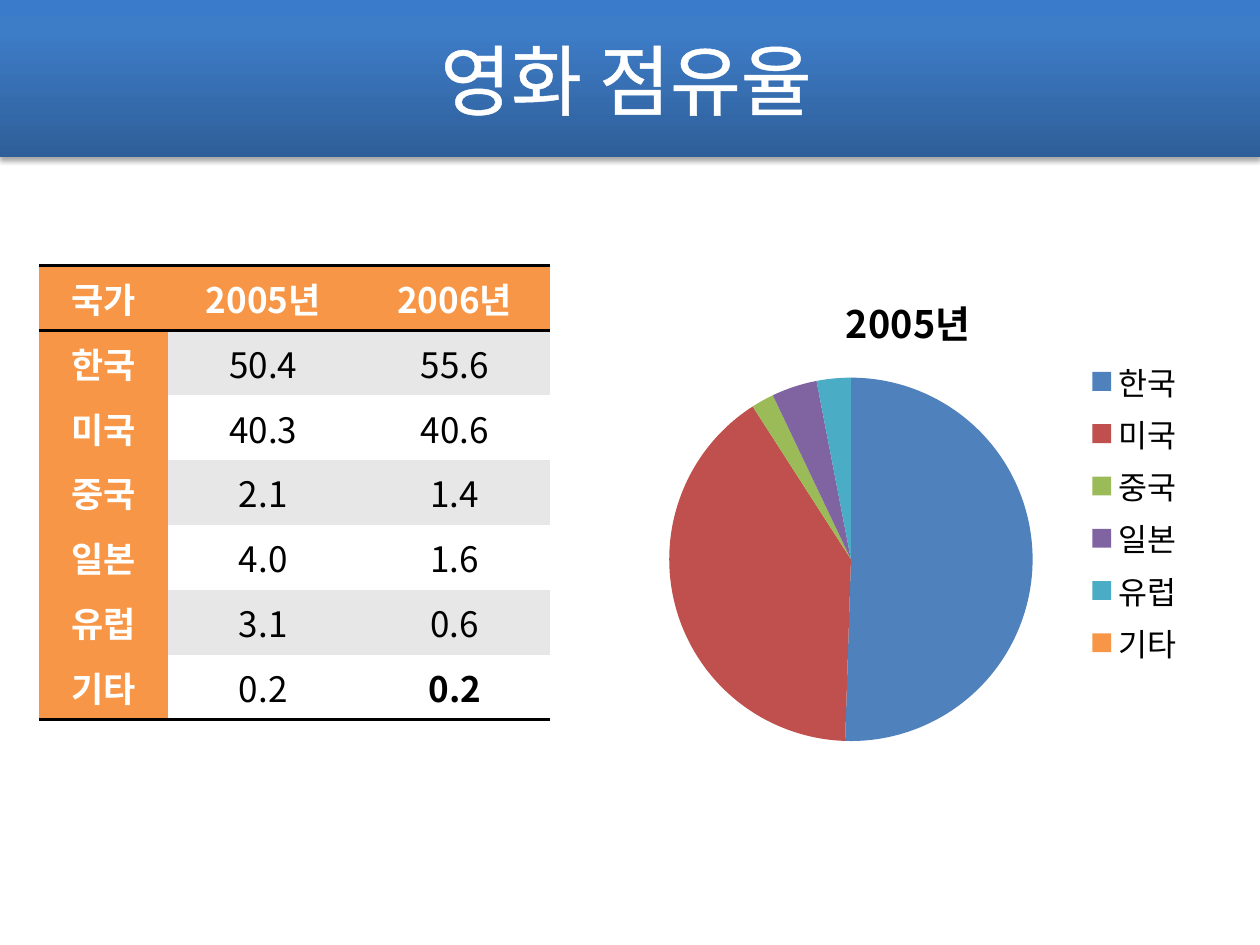
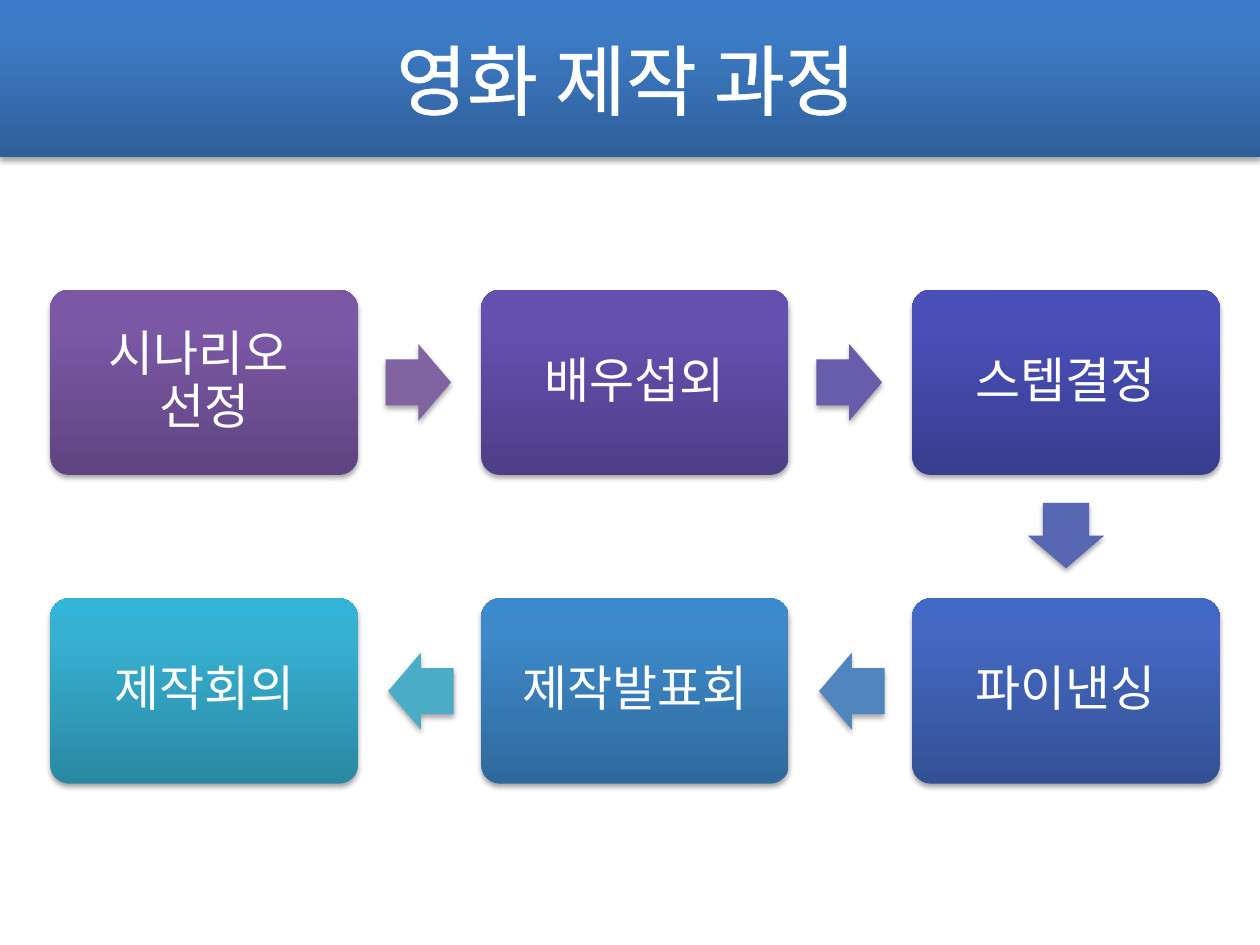
from dataclasses import dataclass
from enum import Enum
from typing import Optional

from lxml import etree
from pptx import Presentation
from pptx import util as u
from pptx.chart.data import CategoryChartData
from pptx.dml.color import RGBColor
from pptx.enum import chart as charts, shapes, text
from pptx.oxml.ns import qn

FONT = "Noto Sans CJK KR"
WHITE = RGBColor(0xFF, 0xFF, 0xFF)
BLACK = RGBColor(0, 0, 0)
GREY = RGBColor(0xE7, 0xE7, 0xE7)
ORANGE = RGBColor(0xF7, 0x96, 0x46)
BLUE = RGBColor(0x4F, 0x81, 0xBD)
RED = RGBColor(0xC0, 0x50, 0x4D)
GREEN = RGBColor(0x9B, 0xBB, 0x59)
PURPLE = RGBColor(0x80, 0x64, 0xA2)
AQUA = RGBColor(0x4B, 0xAC, 0xC6)
VIOLET = RGBColor(0x68, 0x5D, 0xAB)
INDIGO = RGBColor(0x57, 0x67, 0xB4)
STEEL = RGBColor(0x51, 0x85, 0xBD)

SLIDE_WIDTH, SLIDE_HEIGHT, BAND_HEIGHT = 10, 7.5, 1.25
BOX_WIDTH, BOX_HEIGHT = 2.44, 1.47
GRID_LEFT, GRID_TOP, COLUMN_STEP, ROW_STEP = 0.4, 2.3, 3.42, 2.45
ARROW_LENGTH, ARROW_BREADTH, ARROW_GAP = 0.52, 0.61, 0.22
COLUMN_WIDTHS = (1.02, 1.52, 1.52)
NO_TABLE_STYLE = "{2D5ABB26-0587-4C30-8999-92F81FD0307C}"


@dataclass(frozen=True)
class Gradient:
    """Colours from the bottom edge to the top edge."""
    bottom: RGBColor
    middle: RGBColor
    top: RGBColor


class Direction(Enum):
    RIGHT = (1, 0, 0)
    DOWN = (0, 1, 90)
    LEFT = (-1, 0, 180)


@dataclass(frozen=True)
class Step:
    label: str
    column: int
    row: int
    gradient: Gradient
    arrow_color: Optional[RGBColor] = None
    direction: Optional[Direction] = None


@dataclass(frozen=True)
class Share:
    country: str
    values: tuple[float, float]
    color: RGBColor


def gradient(bottom: str, middle: str, top: str) -> Gradient:
    return Gradient(*map(RGBColor.from_string, (bottom, middle, top)))


BAND_GRADIENT = gradient("2F5F99", "3D7CC7", "3A7CCB")
YEARS = ("2005년", "2006년")
SHARES = [
    Share("한국", (50.4, 55.6), BLUE),
    Share("미국", (40.3, 40.6), RED),
    Share("중국", (2.1, 1.4), GREEN),
    Share("일본", (4.0, 1.6), PURPLE),
    Share("유럽", (3.1, 0.6), AQUA),
    Share("기타", (0.2, 0.2), ORANGE),
]
STEPS = [
    Step("시나리오 \n선정", 0, 0, gradient("5F4480", "7B58A6", "7C57A8"), PURPLE, Direction.RIGHT),
    Step("배우섭외", 1, 0, gradient("4D3E87", "6451AF", "6450B2"), VIOLET, Direction.RIGHT),
    Step("스텝결정", 2, 0, gradient("393D8E", "4A4FB8", "484EBB"), INDIGO, Direction.DOWN),
    Step("파이낸싱", 2, 1, gradient("345094", "4468C1", "4168C4"), STEEL, Direction.LEFT),
    Step("제작발표회", 1, 1, gradient("2F699B", "3D89C9", "3B8ACD"), AQUA, Direction.LEFT),
    Step("제작회의", 0, 1, gradient("2A88A2", "37B1D2", "34B4D6")),
]


def add_color(parent, color: RGBColor):
    return etree.SubElement(parent, qn("a:srgbClr"), val=str(color))


def add_east_asian_font(element) -> None:
    """Name the Korean font beside each Latin one."""
    for latin in list(element.iter(qn("a:latin"))):
        latin.addnext(latin.makeelement(qn("a:ea"), {"typeface": FONT}))


def add_run(para, words: str, size: float, color: RGBColor, bold: bool = False):
    span = para.add_run()
    span.text = words
    span.font.name = FONT
    span.font.size = u.Pt(size)
    span.font.bold = bold
    span.font.color.rgb = color
    add_east_asian_font(span._r)
    return span


def add_shadowed_shape(page, kind, left: float, top: float, width: float, height: float):
    shape = page.shapes.add_shape(
        kind, u.Inches(left), u.Inches(top), u.Inches(width), u.Inches(height))
    shape.line.fill.background()
    shape.shadow.inherit = False
    effects = shape.element.spPr.find(qn("a:effectLst"))
    shadow = etree.SubElement(
        effects, qn("a:outerShdw"), blurRad=str(u.Pt(3.1)), dist=str(u.Pt(1.8)),
        dir="5400000", rotWithShape="0")
    etree.SubElement(add_color(shadow, BLACK), qn("a:alpha"), val="35000")
    return shape


def fill_gradient(shape, colors: Gradient) -> None:
    shape.fill.gradient()
    shape.fill.gradient_angle = 90
    stops = shape.element.spPr.find(".//" + qn("a:gsLst"))
    for stop in list(stops):
        stops.remove(stop)
    for percent, color in ((0, colors.bottom), (80, colors.middle), (100, colors.top)):
        add_color(etree.SubElement(stops, qn("a:gs"), pos=str(percent * 1000)), color)


def add_titled_page(deck, title: str):
    page = deck.slides.add_slide(deck.slide_layouts[6])
    band = add_shadowed_shape(
        page, shapes.MSO_SHAPE.RECTANGLE, 0, 0, SLIDE_WIDTH, BAND_HEIGHT)
    fill_gradient(band, BAND_GRADIENT)
    box = page.shapes.add_textbox(
        u.Inches(0.47), u.Inches(0), u.Inches(9), u.Inches(BAND_HEIGHT))
    box.text_frame.word_wrap = True
    box.text_frame.vertical_anchor = text.MSO_ANCHOR.MIDDLE
    para = box.text_frame.paragraphs[0]
    para.alignment = text.PP_ALIGN.CENTER
    span = add_run(para, title, 44, WHITE)
    properties = span._r.get_or_add_rPr()
    outline = properties.makeelement(qn("a:ln"), {"w": str(u.Pt(1.45))})
    add_color(etree.SubElement(outline, qn("a:solidFill")), WHITE)
    properties.insert(0, outline)
    return page


def add_cell_border(cell, side: str) -> None:
    """Rule one side of a cell; a:lnT comes before a:lnB and the fill."""
    properties = cell._tc.get_or_add_tcPr()
    border = properties.makeelement(qn(f"a:{side}"), {"w": str(u.Pt(2))})
    add_color(etree.SubElement(border, qn("a:solidFill")), BLACK)
    properties.insert(0, border)


def write_cell(cell, words: str, fill: RGBColor, color: RGBColor, bold: bool) -> None:
    cell.fill.solid()
    cell.fill.fore_color.rgb = fill
    cell.vertical_anchor = text.MSO_ANCHOR.MIDDLE
    cell.margin_left = cell.margin_right = u.Inches(0.08)
    cell.margin_top = cell.margin_bottom = u.Inches(0)
    para = cell.text_frame.paragraphs[0]
    para.alignment = text.PP_ALIGN.CENTER
    add_run(para, words, 20, color, bold)


def add_share_table(page) -> None:
    rows = [("국가", *YEARS)]
    rows += [(share.country, *(f"{value:.1f}" for value in share.values)) for share in SHARES]
    last_row, last_column = len(rows) - 1, len(YEARS)
    frame = page.shapes.add_table(
        len(rows), len(rows[0]), u.Inches(0.31), u.Inches(2.11),
        u.Inches(sum(COLUMN_WIDTHS)), u.Inches(3.6))
    table = frame.table
    table.first_row = table.horz_banding = False
    table._tbl.tblPr.find(qn("a:tableStyleId")).text = NO_TABLE_STYLE
    for column, width in zip(table.columns, COLUMN_WIDTHS):
        column.width = u.Inches(width)
    for row_number, words in enumerate(rows):
        for column_number, word in enumerate(words):
            cell = table.cell(row_number, column_number)
            is_heading = row_number == 0 or column_number == 0
            is_last = (row_number, column_number) == (last_row, last_column)
            band = GREY if row_number % 2 else WHITE
            write_cell(cell, word, ORANGE if is_heading else band,
                       WHITE if is_heading else BLACK, is_heading or is_last)
            if row_number in (0, last_row):
                add_cell_border(cell, "lnB")
            if row_number == 0:
                add_cell_border(cell, "lnT")


def add_share_pie(page) -> None:
    data = CategoryChartData()
    data.categories = [share.country for share in SHARES]
    data.add_series(YEARS[0], [round(share.values[0]) for share in SHARES])
    chart = page.shapes.add_chart(
        charts.XL_CHART_TYPE.PIE, u.Inches(4.92), u.Inches(2.11),
        u.Inches(4.58), u.Inches(3.91), data).chart
    chart.font.name = FONT
    chart.font.size = u.Pt(18)
    chart.font.color.rgb = BLACK
    chart.has_title = True
    add_run(chart.chart_title.text_frame.paragraphs[0], YEARS[0], 21.6, BLACK, True)
    chart.has_legend = True
    chart.legend.position = charts.XL_LEGEND_POSITION.RIGHT
    chart.legend.include_in_layout = False
    add_east_asian_font(chart._chartSpace.find(qn("c:txPr")))
    plot = chart.plots[0]
    plot.vary_by_categories = True
    for number, share in enumerate(SHARES):
        fill = plot.series[0].points[number].format.fill
        fill.solid()
        fill.fore_color.rgb = share.color


def add_step_box(page, step: Step, left: float, top: float) -> None:
    box = add_shadowed_shape(
        page, shapes.MSO_SHAPE.ROUNDED_RECTANGLE, left, top, BOX_WIDTH, BOX_HEIGHT)
    box.adjustments[0] = 0.1
    fill_gradient(box, step.gradient)
    frame = box.text_frame
    frame.word_wrap = True
    frame.vertical_anchor = text.MSO_ANCHOR.MIDDLE
    frame.margin_left = frame.margin_right = u.Inches(0.12)
    frame.margin_top = frame.margin_bottom = u.Inches(0.12)
    para = frame.paragraphs[0]
    para.alignment = text.PP_ALIGN.CENTER
    para.line_spacing = 0.9
    for number, line in enumerate(step.label.split("\n")):
        if number:
            para.add_line_break()
        add_run(para, line, 28, WHITE)


def add_step_arrow(page, step: Step, left: float, top: float) -> None:
    """Point from the box at left, top towards the next one."""
    across, down, rotation = step.direction.value
    reach = ARROW_GAP + ARROW_LENGTH / 2
    center_x = left + BOX_WIDTH / 2 + across * (BOX_WIDTH / 2 + reach)
    center_y = top + BOX_HEIGHT / 2 + down * (BOX_HEIGHT / 2 + reach)
    arrow = add_shadowed_shape(
        page, shapes.MSO_SHAPE.RIGHT_ARROW, center_x - ARROW_LENGTH / 2,
        center_y - ARROW_BREADTH / 2, ARROW_LENGTH, ARROW_BREADTH)
    arrow.adjustments[0] = 0.6
    arrow.adjustments[1] = 0.5
    arrow.rotation = rotation
    arrow.fill.solid()
    arrow.fill.fore_color.rgb = step.arrow_color


def add_process(page) -> None:
    for step in STEPS:
        left = GRID_LEFT + step.column * COLUMN_STEP
        top = GRID_TOP + step.row * ROW_STEP
        add_step_box(page, step, left, top)
        if step.direction:
            add_step_arrow(page, step, left, top)


def main() -> None:
    deck = Presentation()
    deck.slide_width = u.Inches(SLIDE_WIDTH)
    deck.slide_height = u.Inches(SLIDE_HEIGHT)
    share_page = add_titled_page(deck, "영화 점유율")
    add_share_table(share_page)
    add_share_pie(share_page)
    add_process(add_titled_page(deck, "영화 제작 과정"))
    deck.save("out.pptx")


if __name__ == "__main__":
    main()
